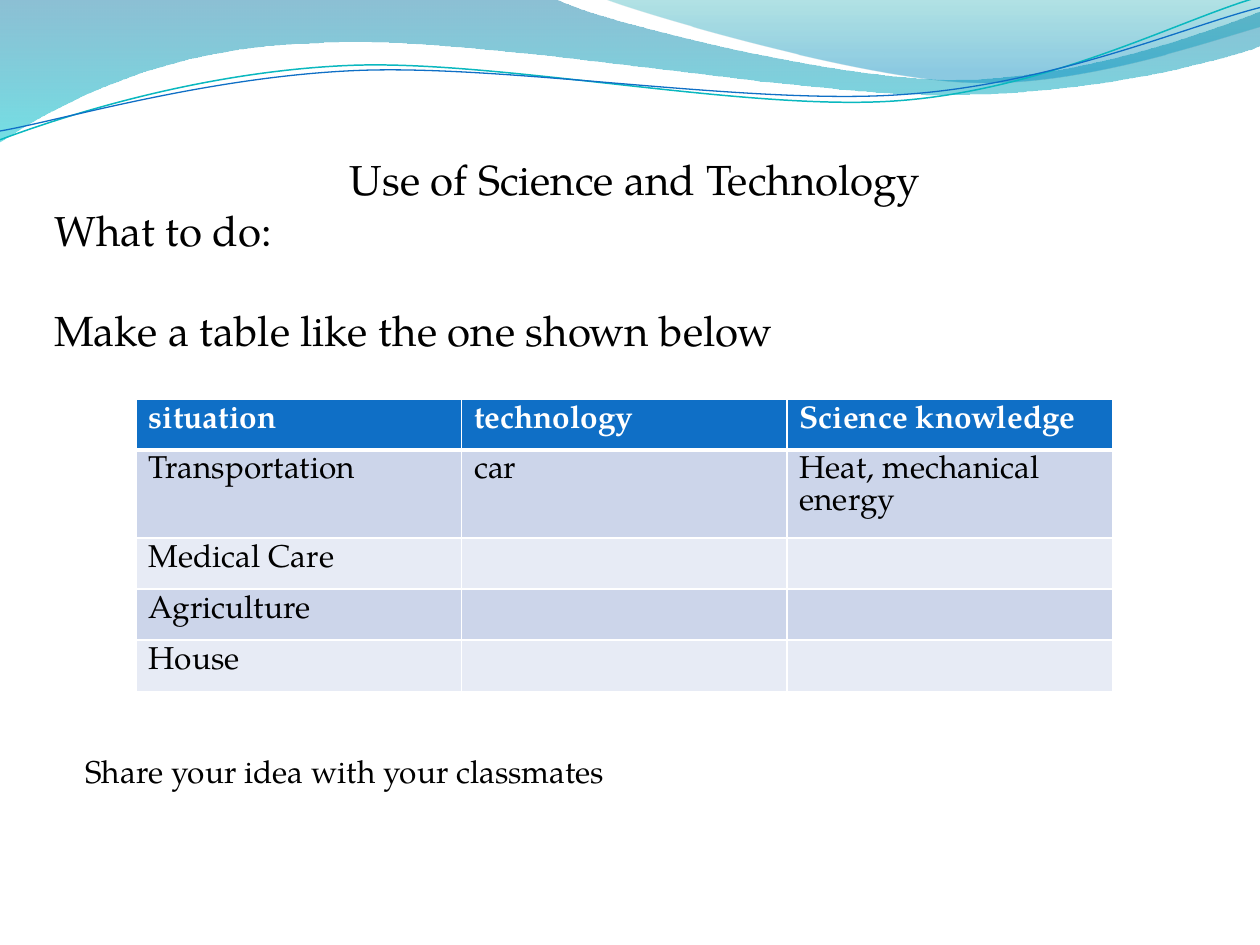
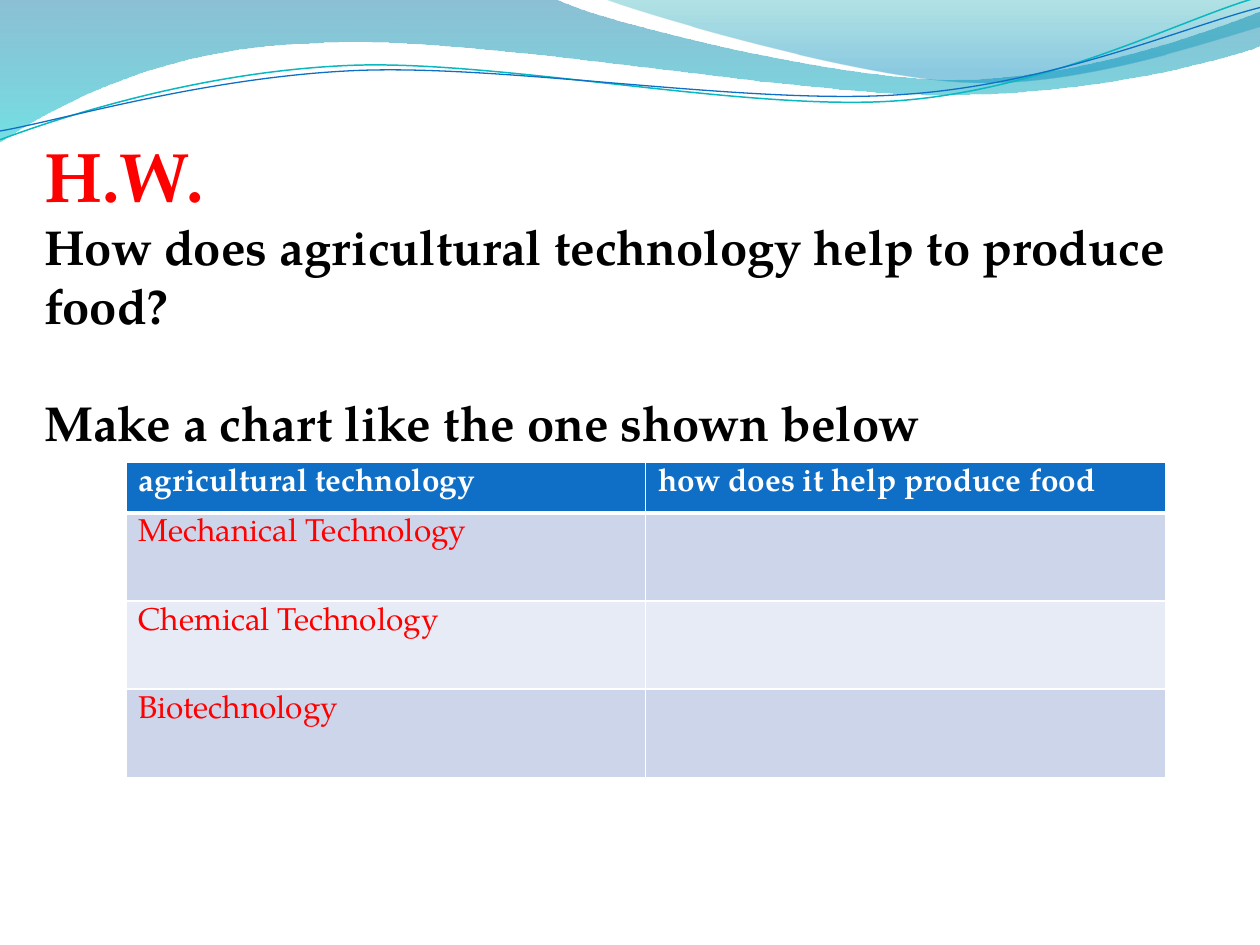
"""Build two classroom slides on science and technology with a shared wave band."""
import pptx
import pptx.dml.color
import pptx.enum.text
import pptx.oxml.ns
import pptx.util
import lxml.etree

Inches = pptx.util.Inches
qn = pptx.oxml.ns.qn
ALIGN = pptx.enum.text.PP_ALIGN

FONT = "TeX Gyre Pagella"
BLACK, WHITE, RED, BLUE, TEAL = "000000", "FFFFFF", "FF0000", "0F6FC6", "0AB8BF"
ROW_FILLS = ("CCD5EA", "E7EBF5")

WIDE_WAVE = [
    [(0, 0)], [(4.4, -0.01)],
    [(4.76, 0.17), (6.64, 0.63), (7.58, 0.63)],
    [(8.53, 0.63), (9.58, 0.26), (10, 0.09)],
    [(10.01, 0.36)],
    [(9.83, 0.44), (8.7, 0.76), (7.46, 0.75)],
    [(6.22, 0.75), (3.82, 0.28), (2.57, 0.34)],
    [(1.29, 0.36), (0.46, 0.83), (-0.01, 1.13)],
]
RIGHT_WAVE = [
    [(4.79, -0.01)],
    [(5.09, 0.11), (6.82, 0.62), (7.69, 0.65)],
    [(8.56, 0.69), (9.61, 0.32), (10, 0.21)],
    [(10, 0)],
]
TEAL_CURVE = [
    [(0, 1.11)],
    [(0.48, 0.93), (1.58, 0.57), (2.77, 0.52)],
    [(3.95, 0.47), (5.93, 0.89), (7.13, 0.8)],
    [(8.33, 0.71), (9.38, 0.15), (9.98, -0.02)],
]
BLUE_CURVE = [
    [(0, 1.04)],
    [(0.47, 0.96), (1.64, 0.61), (2.83, 0.56)],
    [(4.03, 0.51), (5.97, 0.84), (7.17, 0.75)],
    [(8.36, 0.67), (9.41, 0.21), (10, 0.06)],
]


def color(hex_string):
    return pptx.dml.color.RGBColor.from_string(hex_string)


def write(paragraph, text, size=18, ink=BLACK, bold=False, align=ALIGN.LEFT, before=0):
    run = paragraph.add_run()
    run.text = text
    run.font.name = FONT
    run.font.size = pptx.util.Pt(size)
    run.font.bold = bold
    run.font.color.rgb = color(ink)
    paragraph.alignment = align
    paragraph.space_before = pptx.util.Pt(before)


def bend(shape, segments):
    path = next(shape.element.iter(qn("a:path")))
    lines = iter(path.findall(qn("a:lnTo")))
    for segment in segments[1:]:
        group = [next(lines) for _ in segment]
        if len(group) == 3:
            curve = lxml.etree.Element(qn("a:cubicBezTo"))
            group[0].addprevious(curve)
            for line in group:
                curve.append(line[0])
                path.remove(line)


def set_borders(cell, bottom_width):
    properties = cell._tc.get_or_add_tcPr()
    sides = (("L", 1), ("R", 1), ("T", 1), ("B", bottom_width))
    for index, (side, width) in enumerate(sides):
        border = lxml.etree.Element(qn(f"a:ln{side}"), w=str(pptx.util.Pt(width)))
        solid = lxml.etree.SubElement(border, qn("a:solidFill"))
        lxml.etree.SubElement(solid, qn("a:srgbClr"), val=WHITE)
        properties.insert(index, border)


class Deck:
    def __init__(self):
        self.presentation = pptx.Presentation()
        self.presentation.slide_width = Inches(10)
        self.presentation.slide_height = Inches(7.5)
        self.slide = None

    def add_slide(self):
        layout = self.presentation.slide_layouts[5]
        self.slide = self.presentation.slides.add_slide(layout)

    def freeform(self, segments, closed):
        start, *points = [(Inches(x), Inches(y)) for segment in segments for x, y in segment]
        builder = self.slide.shapes.build_freeform(*start)
        builder.add_line_segments(points, close=closed)
        shape = builder.convert_to_shape()
        bend(shape, segments)
        shape.shadow.inherit = False
        master_shapes = self.presentation.slide_master.shapes
        identity = next(shape.element.iter(qn("p:cNvPr")))
        identity.set("id", str(len(master_shapes) + 2))
        master_shapes.element.append(shape.element)
        return shape

    def wave(self, segments, stops):
        shape = self.freeform(segments, True)
        shape.line.fill.background()
        shape.fill.gradient()
        shape.fill.gradient_angle = 270
        for stop, (position, tint, _) in zip(shape.fill.gradient_stops, stops):
            stop.position = position
            stop.color.rgb = color(tint)
        tints = shape.element.spPr.iter(qn("a:srgbClr"))
        for tint, (_, _, opacity) in zip(list(tints), stops):
            lxml.etree.SubElement(tint, qn("a:alpha"), val=str(opacity * 1000))

    def curve(self, segments, ink, width):
        shape = self.freeform(segments, False)
        shape.fill.background()
        shape.line.color.rgb = color(ink)
        shape.line.width = pptx.util.Pt(width)

    def wave_band(self):
        self.wave(WIDE_WAVE, [(0, "0074A1", 45), (1, "00C6CF", 55)])
        self.wave(RIGHT_WAVE, [(0, "00A1A9", 30), (0.8, "008BBF", 45)])
        self.curve(TEAL_CURVE, TEAL, 0.85)
        self.curve(BLUE_CURVE, BLUE, 0.75)

    def place(self, shape, left, top, width, height):
        shape.left, shape.top = Inches(left), Inches(top)
        shape.width, shape.height = Inches(width), Inches(height)
        frame = shape.text_frame
        frame.word_wrap = True
        frame.auto_size = pptx.enum.text.MSO_AUTO_SIZE.NONE
        frame.vertical_anchor = pptx.enum.text.MSO_ANCHOR.TOP
        return frame

    def heading(self, title, lines, box, size, bold=False, **title_style):
        frame = self.place(self.slide.shapes.title, *box)
        write(frame.paragraphs[0], title, bold=bold, **{"size": size, **title_style})
        for index, line in enumerate(lines):
            write(frame.add_paragraph(), line, size=size, bold=bold,
                  before=size * 1.2 * index)

    def note(self, text, box):
        shape = self.slide.shapes.add_textbox(0, 0, 0, 0)
        write(self.place(shape, *box).paragraphs[0], text)

    def table(self, rows, left, top, width, heights, ink=BLACK):
        columns = len(rows[0])
        table = self.slide.shapes.add_table(
            len(rows), columns, Inches(left), Inches(top),
            Inches(width), Inches(sum(heights))).table
        for row_index, (texts, height) in enumerate(zip(rows, heights)):
            table.rows[row_index].height = Inches(height)
            header = row_index == 0
            fill = BLUE if header else ROW_FILLS[(row_index - 1) % 2]
            for column in range(columns):
                cell = table.cell(row_index, column)
                cell.fill.solid()
                cell.fill.fore_color.rgb = color(fill)
                set_borders(cell, 3 if header else 1)
                if column < len(texts):
                    write(cell.text_frame.paragraphs[0], texts[column], bold=header,
                          ink=WHITE if header else ink)


def main():
    deck = Deck()

    deck.add_slide()
    deck.wave_band()
    deck.heading("Use of Science and Technology",
                 ["What to do:", "Make a table like the one shown below"],
                 (0.33, 1.17, 9.42, 2.02), size=24, align=ALIGN.CENTER)
    deck.table([
        ["situation", "technology", "Science knowledge"],
        ["Transportation", "car", "Heat, mechanical energy"],
        ["Medical Care"],
        ["Agriculture"],
        ["House"],
    ], 1.08, 3.17, 7.75, [0.4, 0.7, 0.4, 0.4, 0.4])
    deck.note("Share your idea with your classmates", (0.58, 5.92, 9.42, 0.4))

    deck.add_slide()
    deck.heading("H.W.",
                 ["How does agricultural technology help to produce food?",
                  "Make a chart like the one shown below"],
                 (0.25, 1, 9.75, 2.66), size=28, bold=True, **{"ink": RED})
    title_run = deck.slide.shapes.title.text_frame.paragraphs[0].runs[0]
    title_run.font.size = pptx.util.Pt(40)
    deck.table([
        ["agricultural technology", "how does it help produce food"],
        ["Mechanical Technology"],
        ["Chemical Technology"],
        ["Biotechnology"],
    ], 1, 3.67, 8.25, [0.4, 0.7, 0.7, 0.7], ink=RED)

    deck.presentation.save("out.pptx")


if __name__ == "__main__":
    main()
